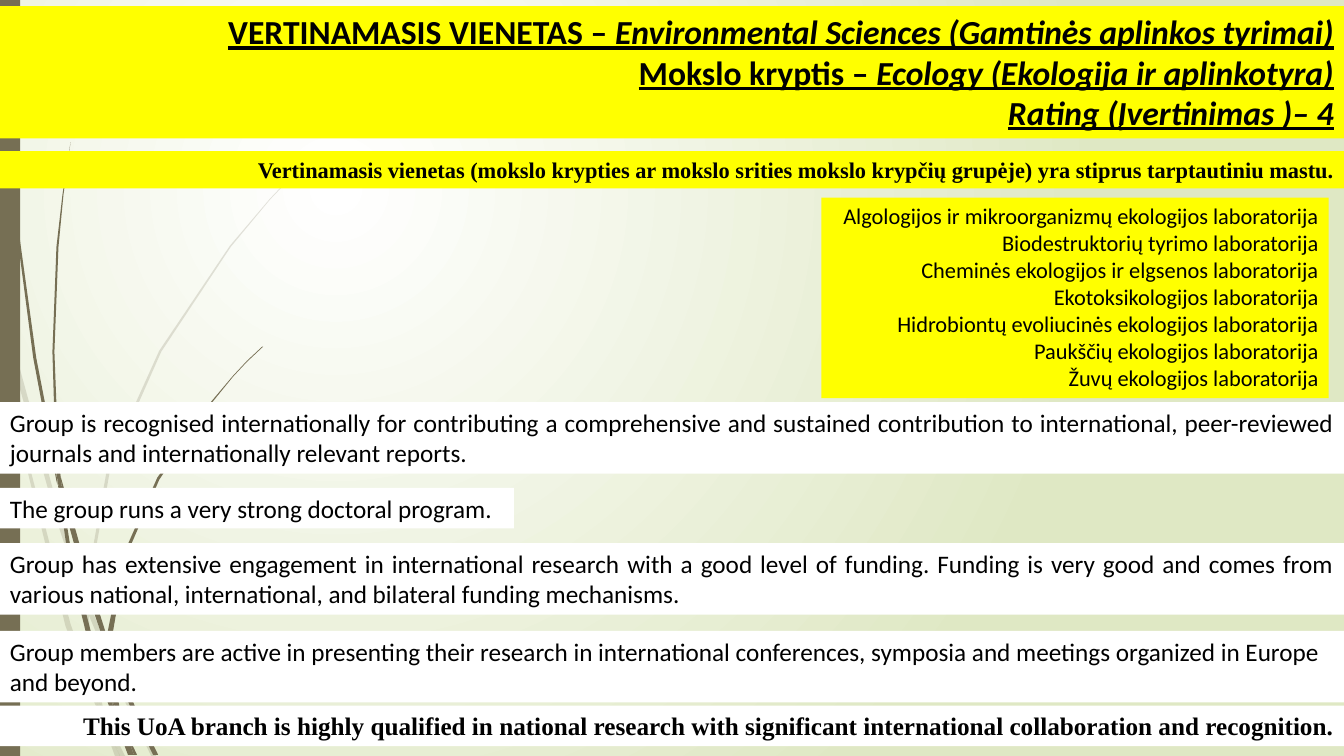
from lxml import etree
from pptx import Presentation
from pptx.dml.color import RGBColor
from pptx.enum.shapes import MSO_SHAPE
from pptx.enum.text import MSO_ANCHOR, MSO_AUTO_SIZE, PP_ALIGN
from pptx.oxml.ns import qn
from pptx.util import Pt

LEFT, RIGHT, JUST = PP_ALIGN.LEFT, PP_ALIGN.RIGHT, PP_ALIGN.JUSTIFY
TOP, FIXED, RECT = MSO_ANCHOR.TOP, MSO_AUTO_SIZE.NONE, MSO_SHAPE.RECTANGLE
BLACK = RGBColor(0x00, 0x00, 0x00)
WHITE = RGBColor(0xFF, 0xFF, 0xFF)
YELLOW = RGBColor(0xFF, 0xFF, 0x00)
GREEN = RGBColor(0xDF, 0xE8, 0xC4)
BROWN = RGBColor(0x76, 0x6F, 0x54)
SANS, SERIF = "Calibri", "Times New Roman"
WIDE, HIGH = 960, 540
GRID = Pt(0.72)  # unit of the grass outlines

PALE = [
    [(11, 350), (9, 322), (0, 282), (0, 299), (10, 344)],
    [(58, 522), (84, 599), (85, 586), (62, 520), (14, 345), (17, 376)],
    [(92, 607), (88, 596), (88, 610), (123, 694), (150, 750), (155, 750), (127, 692)],
    [(119, 750), (124, 750), (105, 711)],
    [(93, 683), (70, 619), (31, 469), (17, 376), (11, 350), (28, 470),
     (65, 621), (92, 693), (101, 714), (99, 707)],
    [(84, 599), (87, 646), (93, 683), (96, 692), (105, 711), (103, 706),
     (91, 646), (88, 610), (88, 608)],
    [(88, 584), (110, 462), (160, 349), (229, 245), (268, 198), (290, 175),
     (312, 154), (312, 153), (289, 175), (268, 197), (228, 244), (158, 348),
     (107, 461), (85, 584), (85, 586), (88, 596)],
    [(101, 714), (114, 750), (119, 750)],
    [(88, 608), (88, 610), (88, 596), (85, 586), (84, 599)],
    [(96, 692), (93, 683), (99, 707), (101, 714), (119, 750), (105, 711)],
]
DARK = [
    [(7, 110), (17, 233), (33, 355), (56, 477), (57, 481), (55, 457), (55, 453),
     (36, 355), (19, 232), (8, 109), (5, 48), (4, 0), (3, 0), (4, 48)],
    [(88, 592), (106, 645), (106, 631), (93, 590), (60, 472), (64, 505)],
    [(113, 649), (110, 641), (111, 656), (132, 708), (152, 749), (157, 749), (136, 706)],
    [(110, 691), (98, 657), (72, 556), (64, 505), (57, 477), (68, 557),
     (93, 659), (111, 708), (117, 722), (116, 717)],
    [(60, 472), (58, 453), (54, 349), (58, 245), (63, 193), (70, 141),
     (62, 193), (56, 245), (52, 349), (55, 449)],
    [(133, 749), (136, 749), (122, 719)],
    [(57, 477), (64, 505), (60, 472), (55, 449), (55, 453)],
    [(111, 633), (125, 552), (158, 476), (205, 406), (231, 374), (245, 359),
     (261, 344), (260, 344), (245, 358), (231, 373), (204, 405), (156, 474),
     (122, 551), (106, 631), (110, 641)],
    [(117, 722), (127, 749), (131, 749)],
    [(106, 645), (110, 691), (116, 706), (122, 719), (121, 716), (111, 656), (109, 651)],
    [(116, 706), (110, 691), (116, 717), (117, 722), (130, 749), (133, 749), (122, 719)],
]

HEAD = [
    [("VERTINAMASIS VIENETAS – ", False),
     ("Environmental Sciences (Gamtinės aplinkos tyrimai)", True)],
    [("Mokslo kryptis – ", False), ("Ecology (Ekologija ir aplinkotyra)", True)],
    [("Rating (Įvertinimas )– 4", True)],
]
LABS = [
    "Algologijos ir mikroorganizmų ekologijos laboratorija",
    "Biodestruktorių tyrimo laboratorija",
    "Cheminės ekologijos ir elgsenos laboratorija",
    "Ekotoksikologijos laboratorija",
    "Hidrobiontų evoliucinės ekologijos laboratorija",
    "Paukščių ekologijos laboratorija",
    "Žuvų ekologijos laboratorija",
]
GRADE = ("Vertinamasis vienetas (mokslo krypties ar mokslo srities mokslo "
         "krypčių grupėje) yra stiprus tarptautiniu mastu.")
FAME = ("Group is recognised internationally for contributing a comprehensive and "
        "sustained contribution to international, peer-reviewed journals and "
        "internationally relevant reports.")
STUDY = "The group runs a very strong doctoral program."
FUNDS = ("Group has extensive engagement in international research with a good level "
         "of funding. Funding is very good and comes from various national, "
         "international, and bilateral funding mechanisms.")
TALKS = ("Group members are active in presenting their research in international "
         "conferences, symposia and meetings organized in Europe and beyond.")
CLOSE = ("This UoA branch is highly qualified in national research with significant "
         "international collaboration and recognition.")


def write(frame, lines, size=18, font=SANS, bold=False, line=False, align=LEFT):
    """Fill a frame; each line is a string or a list of (text, italic) runs."""
    frame.word_wrap = True
    frame.auto_size = FIXED
    frame.vertical_anchor = TOP
    for i, runs in enumerate(lines):
        para = frame.add_paragraph() if i else frame.paragraphs[0]
        para.alignment = align
        for text, slant in [(runs, False)] if isinstance(runs, str) else runs:
            run = para.add_run()
            run.text = text
            face = run.font
            face.name, face.size, face.color.rgb = font, Pt(size), BLACK
            face.bold, face.italic, face.underline = bold, slant, line


class Deck:
    def __init__(self):
        self.show = Presentation()
        self.show.slide_width, self.show.slide_height = Pt(WIDE), Pt(HIGH)
        self.page = self.show.slides.add_slide(self.show.slide_layouts[5])

    def glow(self, inner, outer):
        """Paint a round gradient on the background."""
        fill = self.page.background.fill
        fill.gradient()
        for stop, color in zip(fill.gradient_stops, (inner, outer)):
            stop.color.rgb = color
        grad = self.page.element.find(".//" + qn("a:gradFill"))
        grad.remove(grad.find(qn("a:lin")))
        way = etree.SubElement(grad, qn("a:path"), {"path": "circle"})
        etree.SubElement(way, qn("a:fillToRect"),
                         {"l": "50000", "t": "50000", "r": "100000", "b": "100000"})

    def paint(self, shape, color, alpha=100):
        shape.shadow.inherit = False
        shape.line.fill.background()
        shape.fill.solid()
        shape.fill.fore_color.rgb = color
        if alpha < 100:
            tone = shape.fill._xPr.find(".//" + qn("a:srgbClr"))
            etree.SubElement(tone, qn("a:alpha"), {"val": str(alpha * 1000)})

    def grass(self, blades, alpha=100):
        group = self.page.shapes.add_group_shape()
        for start, *rest in blades:
            pen = group.shapes.build_freeform(*start, scale=GRID)
            pen.add_line_segments(rest, close=True)
            self.paint(pen.convert_to_shape(), BROWN, alpha)

    def strip(self, *box):
        self.paint(self.page.shapes.add_shape(RECT, *map(Pt, box)), BROWN)

    def title(self, lines, box, color, **style):
        head = self.page.shapes.title
        head.left, head.top, head.width, head.height = map(Pt, box)
        head.fill.solid()
        head.fill.fore_color.rgb = color
        write(head.text_frame, lines, **style)
        head.element.getparent().append(head.element)  # in front of the grass

    def panel(self, lines, box, color, **style):
        note = self.page.shapes.add_textbox(*map(Pt, box))
        note.fill.solid()
        note.fill.fore_color.rgb = color
        write(note.text_frame, lines, **style)


def main():
    deck = Deck()
    deck.glow(WHITE, GREEN)
    deck.grass(PALE, alpha=20)
    deck.grass(DARK)
    deck.strip(0, 0, 14.4, HIGH)
    deck.title(HEAD, (0, 4.3, WIDE, 94.5), YELLOW,
               size=24, bold=True, line=True, align=RIGHT)
    deck.panel([GRADE], (0, 108, WIDE, 26.6), YELLOW,
               size=16, font=SERIF, bold=True, align=RIGHT)
    deck.panel(LABS, (586.8, 141.1, 362.2, 143.3), YELLOW, size=16, align=RIGHT)
    deck.panel([FAME], (0, 287.3, WIDE, 51), WHITE, align=JUST)
    deck.panel([STUDY], (0, 348.5, 367.2, 29), WHITE)
    deck.panel([FUNDS], (0, 388, WIDE, 51), WHITE, align=JUST)
    deck.panel([TALKS], (0, 450.7, WIDE, 51), WHITE)
    deck.panel([CLOSE], (0, 504, WIDE, 29), WHITE, font=SERIF, bold=True, align=RIGHT)
    deck.show.save("out.pptx")


if __name__ == "__main__":
    main()
